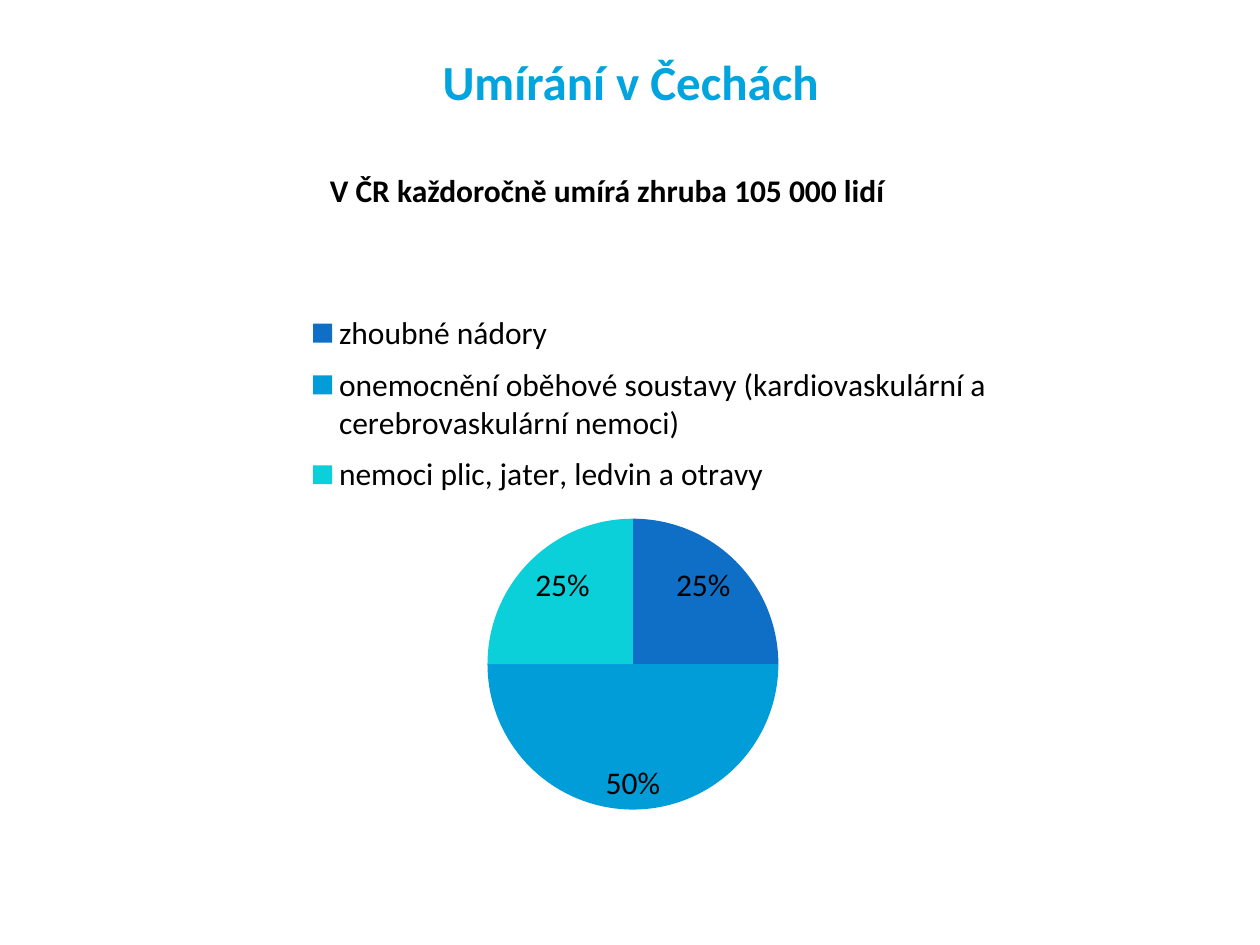
from lxml import etree
from pptx import Presentation
from pptx.chart.data import CategoryChartData
from pptx.dml.color import RGBColor
from pptx.enum.chart import XL_CHART_TYPE, XL_LABEL_POSITION, XL_LEGEND_POSITION
from pptx.enum.text import MSO_ANCHOR, PP_ALIGN
from pptx.oxml import parse_xml
from pptx.oxml.ns import nsdecls, qn
from pptx.util import Cm, Pt

PIE = XL_CHART_TYPE.PIE
TOP = XL_LEGEND_POSITION.TOP
INSIDE_END = XL_LABEL_POSITION.INSIDE_END
CENTER = PP_ALIGN.CENTER
MIDDLE = MSO_ANCHOR.MIDDLE


def set_font(font, size, color, bold=False):
    font.name = "Calibri"
    font.size = Pt(size)
    font.bold = bold
    font.color.rgb = RGBColor.from_string(color)


def make_layout(x, y, w, h, inner=False):
    layout = parse_xml(f"<c:layout {nsdecls('c')}><c:manualLayout/></c:layout>")
    values = [("xMode", "edge"), ("yMode", "edge"), ("x", x), ("y", y), ("w", w), ("h", h)]
    if inner:
        values.insert(0, ("layoutTarget", "inner"))
    for tag, value in values:
        etree.SubElement(layout[0], qn(f"c:{tag}")).set("val", str(value))
    return layout


prs = Presentation()
prs.slide_width, prs.slide_height = Cm(25.4), Cm(19.05)
s = prs.slides.add_slide(prs.slide_layouts[5])

title = s.shapes.title
title.left, title.top, title.width, title.height = Cm(2.31), Cm(0.91), Cm(20.8), Cm(1.45)
tf = title.text_frame
tf.text = "Umírání v Čechách"
tf.vertical_anchor = MIDDLE
p = tf.paragraphs[0]
p.alignment = CENTER
set_font(p.font, 28, "00A4DE", True)

tf = s.shapes.add_textbox(Cm(6.4), Cm(3.33), Cm(12.7), Cm(1.02)).text_frame
tf.word_wrap = True
p = tf.paragraphs[0]
p.text = "V ČR každoročně umírá zhruba 105 000 lidí"
set_font(p.font, 18, "000000", True)

causes = [
    ("zhoubné nádory", 25, "0F6FC6"),
    ("onemocnění oběhové soustavy (kardiovaskulární a cerebrovaskulární nemoci)", 50, "009DD9"),
    ("nemoci plic, jater, ledvin a otravy", 25, "0BD0D9"),
]
data = CategoryChartData()
data.categories = [name for name, share, color in causes]
data.add_series("Series 1", [share for name, share, color in causes])
chart = s.shapes.add_chart(PIE, Cm(4.29), Cm(5.72), Cm(16.94), Cm(11.28), data).chart
set_font(chart.font, 18, "000000")
chart.has_title = False

plot = chart.plots[0]
plot.vary_by_categories = True
for i, (name, share, color) in enumerate(causes):
    fill = plot.series[0].points[i].format.fill
    fill.solid()
    fill.fore_color.rgb = RGBColor.from_string(color)

plot.has_data_labels = True
labels = plot.data_labels
labels.show_percentage = True
labels.show_value = False
labels.number_format = "0%"
labels.number_format_is_linked = False
labels.position = INSIDE_END
set_font(labels.font, 18, "000000")

chart.has_legend = True
legend = chart.legend
legend.position = TOP
legend.include_in_layout = False
set_font(legend.font, 18, "000000")

plot_area = chart.element.find(".//" + qn("c:plotArea"))
for old in plot_area.findall(qn("c:layout")):
    plot_area.remove(old)
plot_area.insert(0, make_layout(0.04, 0.42, 0.92, 0.52, inner=True))
legend_xml = chart.element.find(".//" + qn("c:legend"))
for old in legend_xml.findall(qn("c:layout")):
    legend_xml.remove(old)
legend_xml.find(qn("c:legendPos")).addnext(make_layout(0.11, 0.03, 0.82, 0.37))

prs.save("out.pptx")
